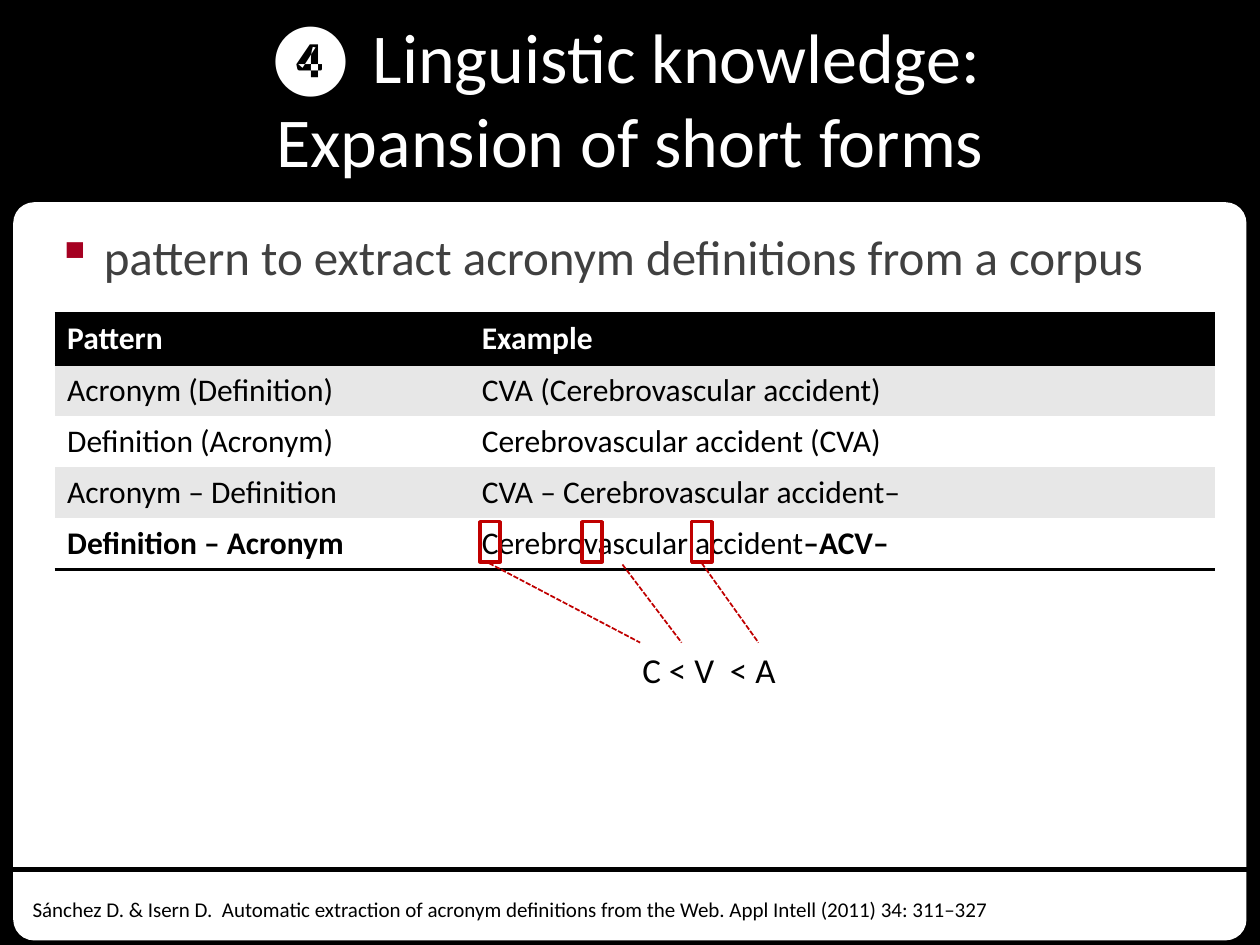
from lxml.etree import SubElement
from pptx import Presentation
from pptx.dml.color import RGBColor
from pptx.enum.dml import MSO_LINE
from pptx.enum.shapes import MSO_CONNECTOR, MSO_SHAPE
from pptx.enum.text import MSO_ANCHOR, MSO_AUTO_SIZE, PP_ALIGN
from pptx.oxml import parse_xml
from pptx.oxml.ns import nsdecls, qn
from pptx.util import Pt

COLORS = {
    "black": "000000",
    "white": "FFFFFF",
    "band": "E7E7E7",
    "text": "404040",
    "bullet": "A50021",
    "mark": "C00000",
}


def color(name):
    return RGBColor.from_string(COLORS[name])


def style(para, size, name, bold=False):
    for span in para.runs:
        span.font.name = "Calibri"
        span.font.size = Pt(size)
        span.font.bold = bold
        span.font.color.rgb = color(name)


deck = Presentation()
deck.slide_width, deck.slide_height = Pt(720), Pt(540)
page = deck.slides.add_slide(deck.slide_layouts[5])
page.background.fill.solid()
page.background.fill.fore_color.rgb = color("black")
shapes = page.shapes

title = shapes.title
title.left, title.top, title.width, title.height = Pt(0), Pt(0), Pt(720), Pt(111.6)
title.fill.solid()
title.fill.fore_color.rgb = color("black")
title.text_frame.auto_size = MSO_AUTO_SIZE.NONE
title.text_frame.vertical_anchor = MSO_ANCHOR.MIDDLE
title.text_frame.text = "❹ "
para = title.text_frame.paragraphs[0]
para.alignment = PP_ALIGN.CENTER
para.add_run().text = "Linguistic knowledge: "
para.add_line_break()
para.add_run().text = "Expansion of short forms"
style(para, 40, "white")
para.runs[0].font.bold = True

panel = shapes.add_shape(MSO_SHAPE.ROUNDED_RECTANGLE, Pt(8.6), Pt(116.6), Pt(702.7), Pt(419.8))
panel.adjustments[0] = 0.026
panel.shadow.inherit = False
panel.fill.solid()
panel.fill.fore_color.rgb = color("white")
panel.line.color.rgb = color("white")
panel.line.width = Pt(2)

texts = [
    ("pattern to extract acronym definitions from a corpus", 25.2, 126, 668.9, 356.4, 28, "text", True),
    ("Sánchez D. & Isern D.  Automatic extraction of acronym definitions from the Web. "
     "Appl Intell (2011) 34: 311–327", 11.5, 509, 697.7, 21.6, 12, "black", True),
    ("C < V  < A", 360, 367.2, 91.4, 31.7, 20, "black", False),
]
boxes = []
for words, left, top, width, height, size, name, wrap in texts:
    box = shapes.add_textbox(Pt(left), Pt(top), Pt(width), Pt(height))
    box.text_frame.word_wrap = wrap
    box.text_frame.text = words
    style(box.text_frame.paragraphs[0], size, name)
    boxes.append(box)

para = boxes[0].text_frame.paragraphs[0]
para.space_before = Pt(5.6)
props = para._p.get_or_add_pPr()
props.set("marL", str(Pt(27)))
props.set("indent", str(Pt(-27)))
bullet_color = SubElement(props, qn("a:buClr"))
SubElement(bullet_color, qn("a:srgbClr"), val=COLORS["bullet"])
SubElement(props, qn("a:buChar"), char="▪")

rows = [
    ("Pattern", "Example"),
    ("Acronym (Definition)", "CVA (Cerebrovascular accident)"),
    ("Definition (Acronym)", "Cerebrovascular accident (CVA)"),
    ("Acronym – Definition", "CVA – Cerebrovascular accident–"),
    ("Definition – Acronym", "Cerebrovascular accident"),
]
frame = shapes.add_table(len(rows), 2, Pt(31.2), Pt(179.2), Pt(663.1), Pt(146))
table = frame.table
table._tbl.tblPr.find(qn("a:tableStyleId")).text = "{2D5ABB26-0587-4C30-8999-92F81FD0307C}"
table.columns[0].width, table.columns[1].width = Pt(236.9), Pt(426.2)
edges = {0: ["lnB", "lnT"], len(rows) - 1: ["lnB"]}
for r, row in enumerate(rows):
    table.rows[r].height = Pt(29.2)
    for c, words in enumerate(row):
        cell = table.cell(r, c)
        cell.text = words
        cell.fill.solid()
        cell.fill.fore_color.rgb = color("black" if r == 0 else "band" if r % 2 else "white")
        style(cell.text_frame.paragraphs[0], 18, "white" if r == 0 else "black", r == 0)
        for edge in edges.get(r, []):
            cell._tc.get_or_add_tcPr().insert(0, parse_xml(
                f'<a:{edge} {nsdecls("a")} w="{Pt(2)}"><a:solidFill>'
                f'<a:srgbClr val="{COLORS["black"]}"/></a:solidFill></a:{edge}>'))

last = len(rows) - 1
table.cell(last, 0).text_frame.paragraphs[0].runs[0].font.bold = True
para = table.cell(last, 1).text_frame.paragraphs[0]
para.add_run().text = "–ACV–"
style(para, 18, "black")
para.runs[1].font.bold = True

for left in (274.3, 332.6, 395.3):
    marker = shapes.add_shape(MSO_SHAPE.RECTANGLE, Pt(left), Pt(298.1), Pt(11.5), Pt(23))
    marker.shadow.inherit = False
    marker.fill.background()
    marker.line.color.rgb = color("mark")
    marker.line.width = Pt(2)

lines = [
    (279.4, 321.8, 365.8, 367.2, "mark", 1, MSO_LINE.SQUARE_DOT),
    (355.7, 322.6, 389.5, 367.2, "mark", 1, MSO_LINE.SQUARE_DOT),
    (401, 321.8, 433.4, 367.2, "mark", 1, MSO_LINE.SQUARE_DOT),
    (0, 496.8, 720, 496.8, "black", 3, MSO_LINE.SOLID),
]
for x1, y1, x2, y2, name, width, dash in lines:
    line = shapes.add_connector(MSO_CONNECTOR.STRAIGHT, Pt(x1), Pt(y1), Pt(x2), Pt(y2))
    line.line.color.rgb = color(name)
    line.line.width = Pt(width)
    line.line.dash_style = dash
    SubElement(line._element.spPr, qn("a:effectLst"))

deck.save("out.pptx")
